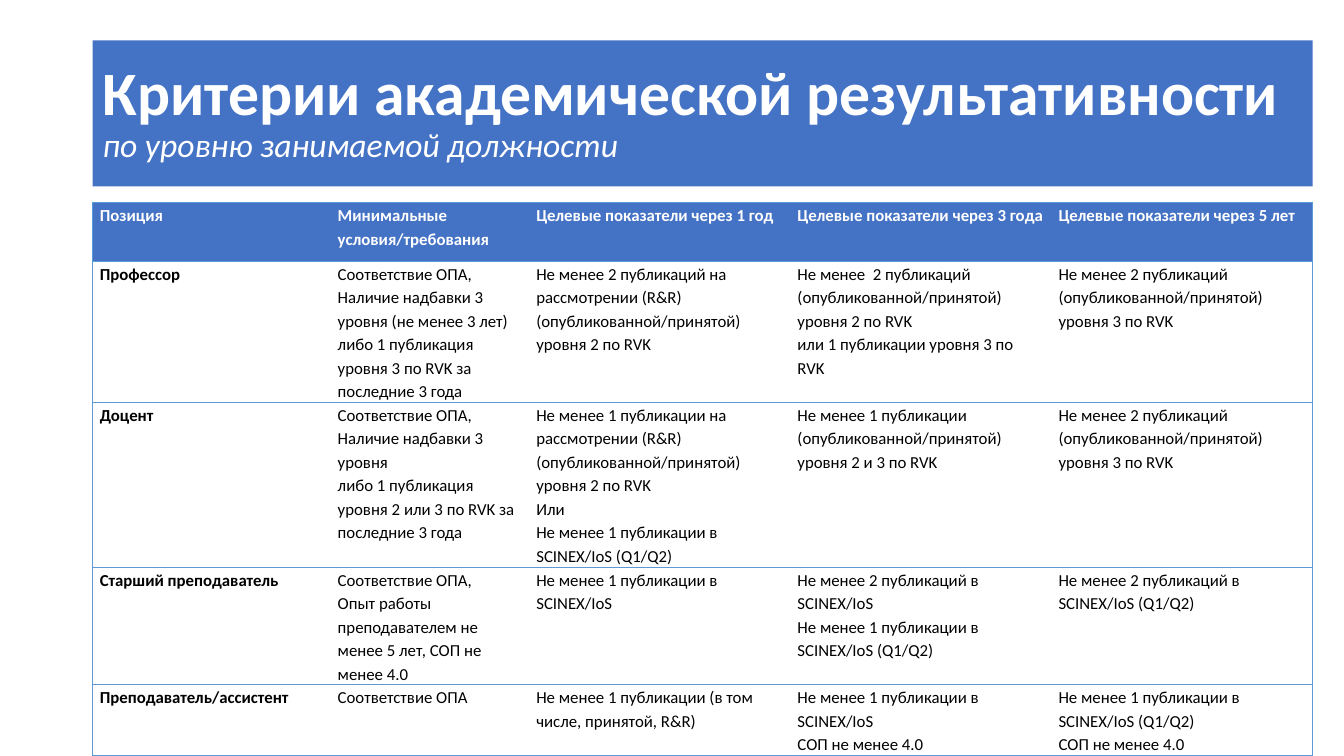
"""Build the slide with academic performance criteria by position."""
import lxml.etree
import pptx
import pptx.dml.color
import pptx.enum.shapes
import pptx.enum.text
import pptx.util
from pptx.util import Inches

BLUE, EDGE, WHITE, BLACK = "4472C4", "5B9BD5", "FFFFFF", "000000"
LEFT, WIDTH = 0.92, 12.1
COLS = [2.36, 1.97, 2.59, 2.59, 2.59]
ROWS = [0.58, 1.36, 1.55, 0.97, 0.58]
CELLS = [
    ["Позиция", "Минимальные условия/требования", "Целевые показатели через 1 год",
     "Целевые показатели через 3 года", "Целевые показатели через 5 лет"],
    ["Профессор",
     "Соответствие ОПА,\nНаличие надбавки 3 уровня (не менее 3 лет) либо 1 публикация уровня 3 по RVK за последние 3 года",
     "Не менее 2 публикаций на рассмотрении (R&R) (опубликованной/принятой) уровня 2 по RVK",
     "Не менее  2 публикаций (опубликованной/принятой) уровня 2 по RVK\nили 1 публикации уровня 3 по RVK",
     "Не менее 2 публикаций (опубликованной/принятой) уровня 3 по RVK"],
    ["Доцент",
     "Соответствие ОПА,\nНаличие надбавки 3 уровня\nлибо 1 публикация уровня 2 или 3 по RVK за последние 3 года",
     "Не менее 1 публикации на рассмотрении (R&R) (опубликованной/принятой) уровня 2 по RVK\nИли\nНе менее 1 публикации в SCINEX/IoS (Q1/Q2)",
     "Не менее 1 публикации (опубликованной/принятой) уровня 2 и 3 по RVK",
     "Не менее 2 публикаций (опубликованной/принятой) уровня 3 по RVK"],
    ["Старший преподаватель",
     "Соответствие ОПА,\nОпыт работы преподавателем не менее 5 лет, СОП не менее 4.0",
     "Не менее 1 публикации в SCINEX/IoS",
     "Не менее 2 публикаций в SCINEX/IoS\nНе менее 1 публикации в SCINEX/IoS (Q1/Q2)",
     "Не менее 2 публикаций в SCINEX/IoS (Q1/Q2)"],
    ["Преподаватель/ассистент", "Соответствие ОПА",
     "Не менее 1 публикации (в том числе, принятой, R&R)",
     "Не менее 1 публикации в SCINEX/IoS\nСОП не менее 4.0",
     "Не менее 1 публикации в SCINEX/IoS (Q1/Q2)\nСОП не менее 4.0"],
]


def paint(code):
    return pptx.dml.color.RGBColor.from_string(code)


class Deck:
    def __init__(self, slide, font):
        self.slide = slide
        self.font = font

    def style(self, run, size, color, bold=False, slant=False):
        font = run.font
        font.name, font.size = self.font, pptx.util.Pt(size)
        font.bold, font.italic = bold, slant
        font.color.rgb = paint(color)

    def title(self, text, left, top, width, height):
        kind = pptx.enum.shapes.MSO_SHAPE.RECTANGLE
        box = self.slide.shapes.add_shape(
            kind, Inches(left), Inches(top), Inches(width), Inches(height))
        box.shadow.inherit = False
        box.fill.solid()
        box.fill.fore_color.rgb = paint(BLUE)
        box.line.fill.background()
        frame = box.text_frame
        frame.word_wrap = True
        frame.vertical_anchor = pptx.enum.text.MSO_ANCHOR.MIDDLE
        frame.text = text
        para = frame.paragraphs[0]
        para.alignment = pptx.enum.text.PP_ALIGN.LEFT
        para.line_spacing = 0.9
        head, sub = para.runs
        self.style(head, 44, WHITE, bold=True)
        self.style(sub, 24, WHITE, slant=True)

    def border(self, cell, sides):
        space = "{http://schemas.openxmlformats.org/drawingml/2006/main}"
        props = cell._tc.get_or_add_tcPr()
        for side in "LRTB":
            line = lxml.etree.SubElement(props, f"{space}ln{side}")
            if side in sides:
                line.set("w", str(pptx.util.Pt(0.5)))
                fill = lxml.etree.SubElement(line, f"{space}solidFill")
                lxml.etree.SubElement(fill, f"{space}srgbClr", val=EDGE)
            else:
                lxml.etree.SubElement(line, f"{space}noFill")

    def cell(self, cell, text, color, bold, fill, sides):
        cell.margin_left = cell.margin_right = Inches(0.07)
        cell.margin_top = cell.margin_bottom = 0
        self.border(cell, sides)
        if fill:
            cell.fill.solid()
            cell.fill.fore_color.rgb = paint(fill)
        else:
            cell.fill.background()
        cell.text_frame.text = text
        for para in cell.text_frame.paragraphs:
            para.line_spacing = 1.15
            for run in para.runs:
                self.style(run, 12, color, bold)

    def table(self, cells, left, top, cols, rows):
        table = self.slide.shapes.add_table(
            len(rows), len(cols), Inches(left), Inches(top),
            Inches(sum(cols)), Inches(sum(rows))).table
        table.first_row = table.horz_banding = False
        for col, width in zip(table.columns, cols):
            col.width = Inches(width)
        for row, height in zip(table.rows, rows):
            row.height = Inches(height)
        for r, line in enumerate(cells):
            for c, text in enumerate(line):
                sides = "TB" + "L" * (c == 0) + "R" * (c == len(cols) - 1)
                color, fill = (BLACK, None) if r else (WHITE, BLUE)
                self.cell(table.cell(r, c), text, color, r == 0 or c == 0, fill, sides)


def main():
    show = pptx.Presentation()
    show.slide_width, show.slide_height = Inches(13.33), Inches(7.5)
    deck = Deck(show.slides.add_slide(show.slide_layouts[6]), "Calibri")
    deck.title("Критерии академической результативности\vпо уровню занимаемой должности",
               LEFT, 0.4, WIDTH, 1.45)
    deck.table(CELLS, LEFT, 2.01, COLS, ROWS)
    show.save("out.pptx")


if __name__ == "__main__":
    main()
